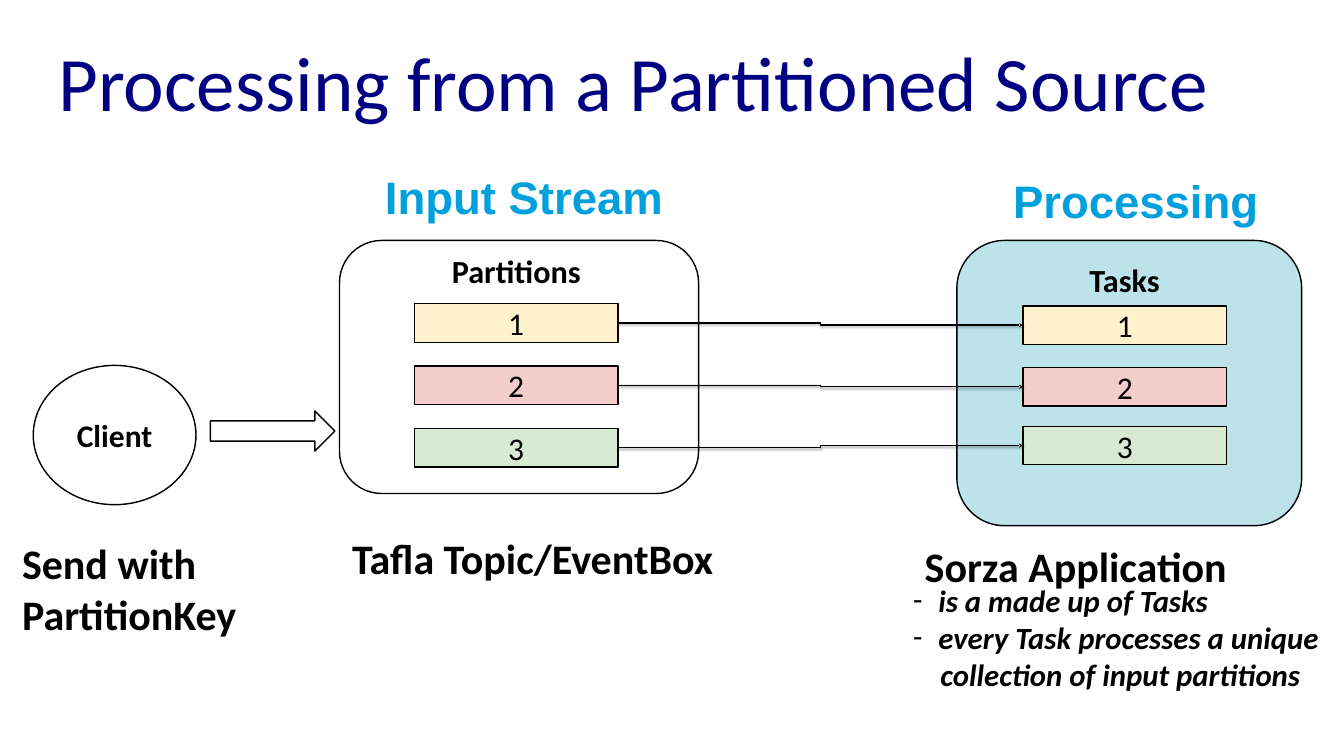
import pptx
import pptx.dml.color
import pptx.enum.shapes
import pptx.enum.text
import pptx.oxml
import pptx.oxml.ns
import pptx.util

Pt = pptx.util.Pt
SHAPES = pptx.enum.shapes.MSO_SHAPE
ALIGN = pptx.enum.text.PP_ALIGN
ANCHOR = pptx.enum.text.MSO_ANCHOR
NAMESPACE = pptx.oxml.ns.nsdecls("a")
BLACK = "000000"
WHITE = "FFFFFF"
BAR_COLORS = ("FFF2CC", "F4CCCC", "D9EAD3")
BAR_WIDTH = 291
BAR_HEIGHT = 55


def color(value):
    return pptx.dml.color.RGBColor.from_string(value)


def write(shape, text, size, align=ALIGN.LEFT, anchor=ANCHOR.TOP, bold=False,
          italic=False, font="Calibri", ink=BLACK, insets=(18, 9)):
    frame = shape.text_frame
    frame.text = text
    frame.word_wrap = True
    frame.auto_size = pptx.enum.text.MSO_AUTO_SIZE.NONE
    frame.vertical_anchor = anchor
    frame.margin_left = frame.margin_right = Pt(insets[0])
    frame.margin_top = frame.margin_bottom = Pt(insets[1])
    for paragraph in frame.paragraphs:
        paragraph.alignment = align
        paragraph.space_before = Pt(0)
        for run in paragraph.runs:
            run.font.name = font
            run.font.size = Pt(size)
            run.font.bold = bold
            run.font.italic = italic
            run.font.color.rgb = color(ink)


def place(shape, box):
    shape.left, shape.top, shape.width, shape.height = map(Pt, box)


def add_label(slide, box, text, size, **style):
    label = slide.shapes.add_textbox(*map(Pt, box))
    write(label, text, size, **style)


def add_outlined(slide, kind, box, fill):
    shape = slide.shapes.add_shape(kind, *map(Pt, box))
    shape.shadow.inherit = False
    shape.fill.solid()
    shape.fill.fore_color.rgb = color(fill)
    shape.line.color.rgb = color(BLACK)
    shape.line.width = Pt(2)
    return shape


def add_title(slide, box):
    place(slide.shapes.title, box)
    write(slide.shapes.title, "Processing from a Partitioned Source", 110,
          anchor=ANCHOR.MIDDLE, ink="000080", insets=(18, 18))


def add_client(slide, box):
    left, top, width, height = box
    client = add_outlined(slide, SHAPES.OVAL, box, WHITE)
    write(client, "Client", 45, ALIGN.CENTER, ANCHOR.MIDDLE, bold=True)
    add_outlined(slide, SHAPES.RIGHT_ARROW,
                 (left + width + 20.5, top + 65, 178, 57.5), WHITE)
    add_label(slide, (left - 34, top + height + 38, 465, 140),
              "Send with\nPartitionKey", 60, bold=True)


def add_panel(slide, box, fill, heading, heading_box, name, name_box, bars_left, bar_tops):
    left, top = box[:2]
    add_outlined(slide, SHAPES.ROUNDED_RECTANGLE, box, fill)
    for text, size, font, ink, insets, (x, y, width, height) in (
            (heading, 65, "Arial", "00A0DC", (7, 7), heading_box),
            (name, 46, "Calibri", BLACK, (18, 9), name_box)):
        add_label(slide, (left + x, top + y, width, height), text, size,
                  align=ALIGN.CENTER, bold=True, font=font, ink=ink, insets=insets)
    bars = []
    for number, (bar_top, bar_color) in enumerate(zip(bar_tops, BAR_COLORS), 1):
        bar = add_outlined(slide, SHAPES.RECTANGLE,
                           (left + bars_left, top + bar_top, BAR_WIDTH, BAR_HEIGHT), bar_color)
        write(bar, str(number), 45, ALIGN.CENTER, ANCHOR.MIDDLE)
        bars.append(bar)
    return bars


def connect(slide, partition, task):
    connector = slide.shapes.add_connector(pptx.enum.shapes.MSO_CONNECTOR.ELBOW, 0, 0, 0, 0)
    connector.begin_connect(partition, 3)
    connector.end_connect(task, 1)
    connector.line.color.rgb = color(BLACK)
    connector.line.width = Pt(2)
    connector.line._get_or_add_ln().append(
        pptx.oxml.parse_xml(f'<a:tailEnd {NAMESPACE} type="stealth"/>'))
    connector._element.spPr.append(pptx.oxml.parse_xml(
        f'<a:effectLst {NAMESPACE}><a:outerShdw blurRad="{Pt(3.1)}" dist="{Pt(1.6)}" '
        f'dir="5400000" rotWithShape="0"><a:srgbClr val="{BLACK}"><a:alpha val="38000"/>'
        '</a:srgbClr></a:outerShdw></a:effectLst>'))


def add_task_notes(slide, box):
    body = slide.placeholders[1]
    place(body, box)
    write(body, "is a made up of Tasks\nevery Task processes a unique\n"
                "collection of input partitions", 44, bold=True, italic=True)
    *bulleted, continuation = body.text_frame.paragraphs
    for paragraph in bulleted:
        properties = paragraph._p.get_or_add_pPr()
        properties.set("marL", str(Pt(36)))
        properties.set("indent", str(Pt(-36)))
        for bullet in (f'<a:buClr {NAMESPACE}><a:srgbClr val="{BLACK}"/></a:buClr>',
                       f'<a:buFont {NAMESPACE} typeface="Calibri"/>',
                       f'<a:buChar {NAMESPACE} char="-"/>'):
            properties.append(pptx.oxml.parse_xml(bullet))
    properties = continuation._p.get_or_add_pPr()
    properties.set("marL", str(Pt(39)))
    properties.set("indent", "0")
    properties.append(pptx.oxml.parse_xml(f'<a:buNone {NAMESPACE}/>'))


def main():
    presentation = pptx.Presentation()
    presentation.slide_width = Pt(1920)
    presentation.slide_height = Pt(1080)
    slide = presentation.slides.add_slide(presentation.slide_layouts[1])

    add_title(slide, (65.5, 33, 1789, 166))
    add_client(slide, (47.5, 522, 232.5, 199))
    partitions = add_panel(
        slide, (485, 343.5, 513, 361.5), WHITE,
        "Input Stream", (17.5, -109.5, 492.5, 106),
        "Partitions", (107, 6.5, BAR_WIDTH, 63),
        107, (90.5, 179.5, 268.5))
    tasks = add_panel(
        slide, (1367, 343.5, 492.5, 407.5), "BCE2EA",
        "Processing", (51.5, -103, 408, 106),
        "Tasks", (94, 19.5, BAR_WIDTH, 63),
        94.5, (93.5, 181.5, 265.5))
    for partition, task in zip(partitions, tasks):
        connect(slide, partition, task)
    add_label(slide, (485, 751, 663, 78), "Tafla Topic/EventBox", 60, bold=True)
    add_label(slide, (1303, 762.5, 741.5, 78), "Sorza Application", 60, bold=True)
    add_task_notes(slide, (1286.5, 822, 674.5, 188.5))
    presentation.save("out.pptx")


if __name__ == "__main__":
    main()
